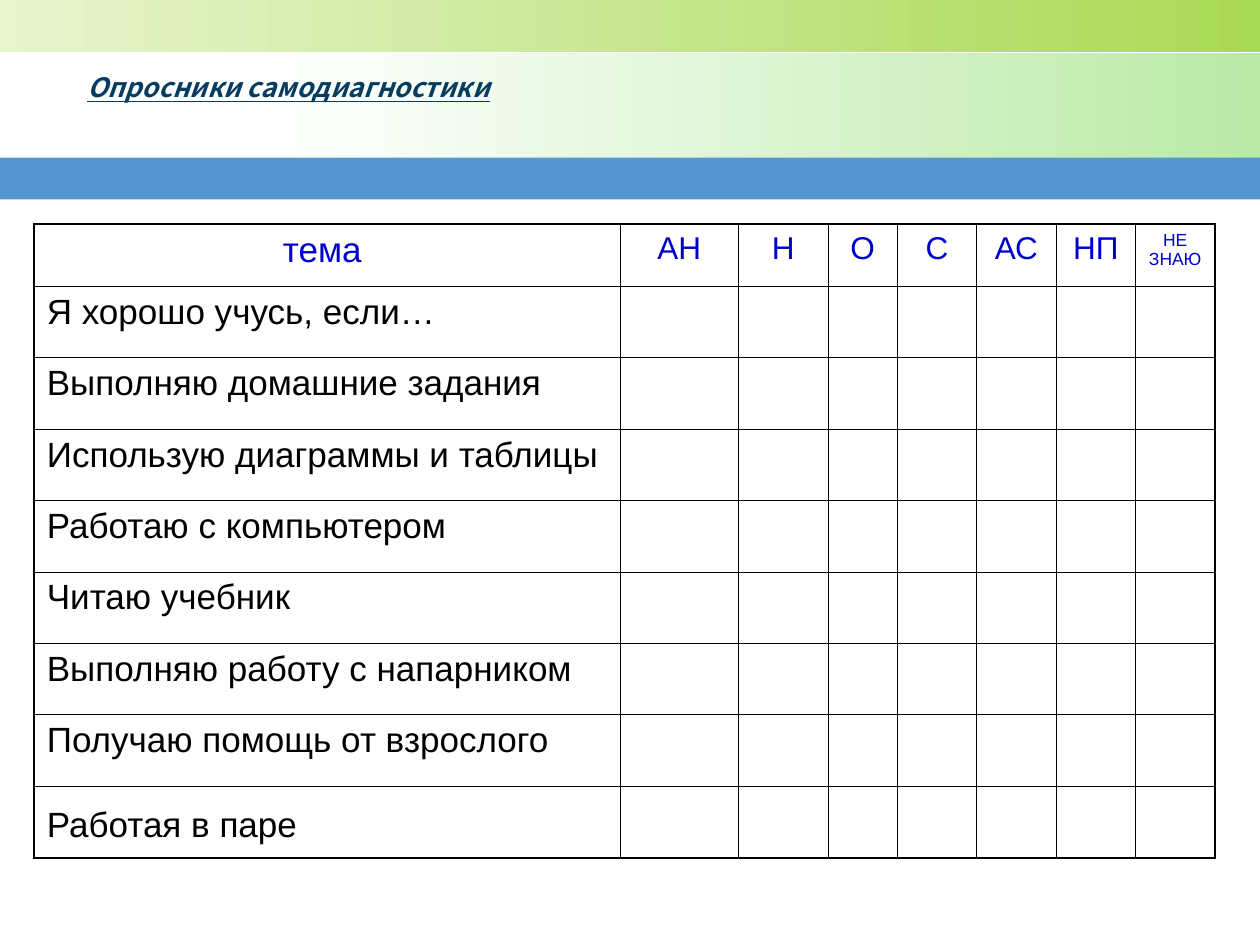
from lxml import etree
from pptx import Presentation
from pptx.dml.color import RGBColor
from pptx.enum import shapes, text
from pptx.oxml import ns
from pptx.util import Cm, Pt

LIME_PALE = RGBColor(0xE7, 0xF4, 0xCE)
LIME = RGBColor(0xAA, 0xD9, 0x55)
GREEN = RGBColor(0xBB, 0xEA, 0xA8)
BLUE = RGBColor(0x55, 0x98, 0xCF)
NAVY = RGBColor(0x06, 0x3C, 0x60)
HEADING_BLUE = RGBColor(0x00, 0x00, 0xCC)
WHITE = RGBColor(0xFF, 0xFF, 0xFF)
BLACK = RGBColor(0, 0, 0)

TITLE = "Опросники самодиагностики"
# heading, text size in points, column width in cm
COLUMNS = [
    ("тема ", 20, 11.81),
    ("АН", 18, 2.39),
    ("Н", 18, 1.8),
    ("О", 18, 1.4),
    ("С", 18, 1.6),
    ("АС", 18, 1.6),
    ("НП", 18, 1.6),
    ("НЕ ЗНАЮ", 10, 1.6),
]
TOPICS = [
    "Я хорошо учусь, если…",
    "Выполняю домашние задания",
    "Использую диаграммы и таблицы",
    "Работаю с компьютером",
    "Читаю учебник",
    "Выполняю работу с напарником",
    "Получаю помощь от взрослого",
    "Работая в паре",
]
# left, top, width, height in cm, then one or two colours
BANDS = [
    (0, 0, 25.4, 1.06, [LIME_PALE, LIME]),
    (5.5, 1.06, 19.9, 2.12, [WHITE, GREEN]),
    (0, 3.18, 25.4, 0.84, [BLUE]),
]
TABLE_LEFT, TABLE_TOP = 0.69, 4.52
HEADER_HEIGHT, ROW_HEIGHT = 1.25, 1.44
OUTER_LINE, INNER_LINE = 1.08, 0.45


def add_band(slide, left, top, width, height, colors):
    band = slide.shapes.add_shape(
        shapes.MSO_SHAPE.RECTANGLE, Cm(left), Cm(top), Cm(width), Cm(height))
    band.shadow.inherit = False
    band.line.fill.background()
    if len(colors) == 1:
        band.fill.solid()
        band.fill.fore_color.rgb = colors[0]
    else:
        band.fill.gradient()
        band.fill.gradient_angle = 0
        for stop, color in zip(band.fill.gradient_stops, colors):
            stop.color.rgb = color


def set_borders(cell, widths):
    """Draw the borders; widths maps the sides L, R, T, B, in that order, to points."""
    properties = cell._tc.get_or_add_tcPr()
    for index, (side, width) in enumerate(widths.items()):
        line = etree.Element(ns.qn(f"a:ln{side}"), w=str(Pt(width)))
        fill = etree.SubElement(line, ns.qn("a:solidFill"))
        etree.SubElement(fill, ns.qn("a:srgbClr"), val=str(BLACK))
        properties.insert(index, line)


def write_cell(cell, words, size, color, alignment):
    cell.text_frame.text = words
    paragraph = cell.text_frame.paragraphs[0]
    paragraph.alignment = alignment
    font = paragraph.runs[0].font
    font.name, font.size, font.color.rgb = "Arial", Pt(size), color


def add_survey(slide):
    last_row, last_column = len(TOPICS), len(COLUMNS) - 1
    width = sum(column[2] for column in COLUMNS)
    height = HEADER_HEIGHT + ROW_HEIGHT * last_row
    survey = slide.shapes.add_table(
        last_row + 1, last_column + 1,
        Cm(TABLE_LEFT), Cm(TABLE_TOP), Cm(width), Cm(height)).table
    survey.first_row = survey.horz_banding = False

    for row_index, row in enumerate(survey.rows):
        row.height = Cm(ROW_HEIGHT if row_index else HEADER_HEIGHT)
        for column_index, cell in enumerate(row.cells):
            cell.fill.background()
            on_edge = {
                "L": column_index == 0,
                "R": column_index == last_column,
                "T": row_index == 0,
                "B": row_index == last_row,
            }
            set_borders(cell, {side: OUTER_LINE if edge else INNER_LINE
                               for side, edge in on_edge.items()})

    for index, (heading, size, column_width) in enumerate(COLUMNS):
        survey.columns[index].width = Cm(column_width)
        write_cell(survey.cell(0, index), heading, size, HEADING_BLUE,
                   text.PP_ALIGN.CENTER)
    for index, topic in enumerate(TOPICS, start=1):
        write_cell(survey.cell(index, 0), topic, 20, BLACK, text.PP_ALIGN.LEFT)
    survey.cell(last_row, 0).margin_top = Cm(0.39)


def format_title(title):
    title.left, title.top, title.width, title.height = Cm(1.5), Cm(0.71), Cm(22.86), Cm(2.08)
    frame = title.text_frame
    frame.text = TITLE
    frame.auto_size = text.MSO_AUTO_SIZE.NONE
    frame.vertical_anchor = text.MSO_ANCHOR.MIDDLE
    paragraph = frame.paragraphs[0]
    paragraph.alignment = text.PP_ALIGN.LEFT
    font = paragraph.runs[0].font
    font.name, font.size, font.color.rgb = "Noto Sans CJK KR", Pt(15.2), NAVY
    font.bold = font.italic = font.underline = True


def main():
    deck = Presentation()
    deck.slide_width, deck.slide_height = Cm(25.4), Cm(19.05)
    slide = deck.slides.add_slide(deck.slide_layouts[5])
    for band in BANDS:
        add_band(slide, *band)
    add_survey(slide)
    title = slide.shapes.title
    format_title(title)
    slide.shapes.element.append(title.element)  # bring in front of the bands
    deck.save("out.pptx")


if __name__ == "__main__":
    main()
